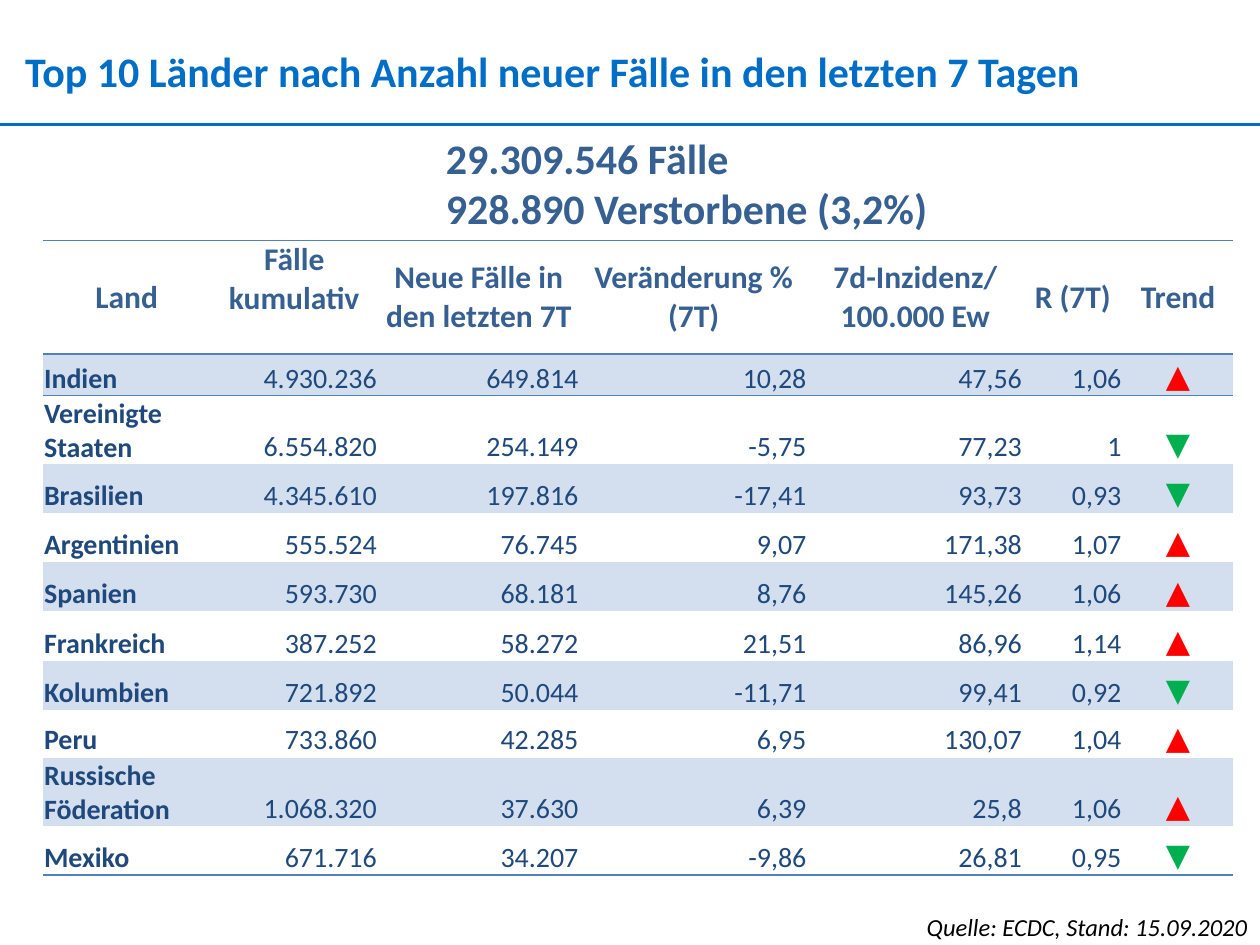
from lxml.etree import SubElement
from pptx import Presentation
from pptx.dml.color import RGBColor
from pptx.enum.shapes import MSO_CONNECTOR
from pptx.enum.text import MSO_ANCHOR as Anchor, MSO_AUTO_SIZE as AutoSize, PP_ALIGN as Align
from pptx.oxml.ns import qn
from pptx.util import Inches, Pt

FONT = "Calibri"
TITLE_BLUE = "006EC7"
HEADING_BLUE = "366092"
BODY_BLUE = "1F497D"
BORDER_BLUE = "4F81BD"
BAND = "D3DFEE"
TREND_COLORS = {"▲": "FF0000", "▼": "00B050"}
PLAIN_TABLE_STYLE = "{2D5ABB26-0587-4C30-8999-92F81FD0307C}"

COL_WIDTHS = [1.33, 1.33, 1.6, 1.81, 1.71, 0.79, 0.88]
ROW_HEIGHTS = [0.9, 0.33, 0.54] + [0.39] * 5 + [0.38, 0.54, 0.39]
HEADERS = ["Land", "Fälle kumulativ", "Neue Fälle in den letzten 7T", "Veränderung % (7T)",
           "7d-Inzidenz/ 100.000 Ew", "R (7T)", "Trend"]
COUNTRIES = [
    ("Indien", "4.930.236", "649.814", "10,28", "47,56", "1,06", "▲"),
    ("Vereinigte Staaten", "6.554.820", "254.149", "-5,75", "77,23", "1", "▼"),
    ("Brasilien", "4.345.610", "197.816", "-17,41", "93,73", "0,93", "▼"),
    ("Argentinien", "555.524", "76.745", "9,07", "171,38", "1,07", "▲"),
    ("Spanien", "593.730", "68.181", "8,76", "145,26", "1,06", "▲"),
    ("Frankreich", "387.252", "58.272", "21,51", "86,96", "1,14", "▲"),
    ("Kolumbien", "721.892", "50.044", "-11,71", "99,41", "0,92", "▼"),
    ("Peru", "733.860", "42.285", "6,95", "130,07", "1,04", "▲"),
    ("Russische Föderation", "1.068.320", "37.630", "6,39", "25,8", "1,06", "▲"),
    ("Mexiko", "671.716", "34.207", "-9,86", "26,81", "0,95", "▼"),
]


def rgb(color):
    return RGBColor.from_string(color)


def style_paragraph(p, size, color, bold=False, italic=False, align=Align.LEFT):
    p.alignment = align
    font = p.font
    font.name, font.size, font.bold, font.italic = FONT, Pt(size), bold, italic
    font.color.rgb = rgb(color)


def set_margins(target, left, top, right, bottom):
    target.margin_left, target.margin_top = Inches(left), Inches(top)
    target.margin_right, target.margin_bottom = Inches(right), Inches(bottom)


def add_text(slide, box, lines, size, color, margins=(0.1, 0.05, 0.1, 0.05), wrap=True, **style):
    tf = slide.shapes.add_textbox(*map(Inches, box)).text_frame
    tf.word_wrap = wrap
    tf.auto_size = AutoSize.SHAPE_TO_FIT_TEXT
    set_margins(tf, *margins)
    tf.text = "\n".join(lines)
    for p in tf.paragraphs:
        style_paragraph(p, size, color, **style)


def add_rule(slide, y):
    line = slide.shapes.add_connector(MSO_CONNECTOR.STRAIGHT, 0, Inches(y), Inches(10), Inches(y))
    line.line.color.rgb = rgb(TITLE_BLUE)
    line.line.width = Pt(1.5)
    SubElement(line.element.spPr, qn("a:effectLst"))


def add_borders(cell, sides):
    tc_pr = cell._tc.get_or_add_tcPr()
    for side in sides:
        ln = SubElement(tc_pr, qn(f"a:ln{side}"), w=str(Pt(1)))
        fill = SubElement(ln, qn("a:solidFill"))
        SubElement(fill, qn("a:srgbClr"), val=BORDER_BLUE)


def fill_cell(cell, text, anchor, margins, borders="", band=False, **style):
    cell.text = text
    cell.vertical_anchor = anchor
    set_margins(cell, *margins)
    style_paragraph(cell.text_frame.paragraphs[0], **style)
    add_borders(cell, borders)
    if band:
        cell.fill.solid()
        cell.fill.fore_color.rgb = rgb(BAND)
    else:
        cell.fill.background()


def body_style(col, text):
    if text in TREND_COLORS:
        return dict(size=18, color=TREND_COLORS[text], align=Align.CENTER)
    if col == 0:
        return dict(size=16, color=BODY_BLUE, bold=True)
    return dict(size=16, color=BODY_BLUE, align=Align.RIGHT)


def add_country_table(slide, left, top):
    frame = slide.shapes.add_table(
        len(ROW_HEIGHTS), len(COL_WIDTHS), Inches(left), Inches(top),
        Inches(sum(COL_WIDTHS)), Inches(sum(ROW_HEIGHTS)))
    table = frame.table
    table.first_row = table.horz_banding = False
    next(frame.element.iter(qn("a:tableStyleId"))).text = PLAIN_TABLE_STYLE
    for column, width in zip(table.columns, COL_WIDTHS):
        column.width = Inches(width)
    for row, height in zip(table.rows, ROW_HEIGHTS):
        row.height = Inches(height)

    for col, text in enumerate(HEADERS):
        bottom = 0.3 if text == "Fälle kumulativ" else 0
        fill_cell(table.cell(0, col), text, Anchor.MIDDLE, (0.06, 0, 0.06, bottom), "TB",
                  size=18, color=HEADING_BLUE, bold=True, align=Align.CENTER)
    for row, country in enumerate(COUNTRIES, 1):
        borders = {1: "T", len(COUNTRIES): "B"}.get(row, "")
        for col, text in enumerate(country):
            fill_cell(table.cell(row, col), text, Anchor.BOTTOM, (0.01, 0.01, 0.01, 0),
                      borders, band=row % 2 == 1, **body_style(col, text))


def main():
    prs = Presentation()
    prs.slide_width, prs.slide_height = Inches(10), Inches(7.5)
    slide = prs.slides.add_slide(prs.slide_layouts[6])
    add_text(slide, (0.2, 0.36, 9.63, 0.4),
             ["Top 10 Länder nach Anzahl neuer Fälle in den letzten 7 Tagen"],
             24, TITLE_BLUE, margins=(0, 0, 0, 0), bold=True)
    add_rule(slide, 0.99)
    add_text(slide, (3.44, 1, 4.21, 0.91), ["29.309.546 Fälle", "928.890 Verstorbene (3,2%)"],
             24, HEADING_BLUE, wrap=False, bold=True)
    add_text(slide, (6.46, 7.19, 3.54, 0.34), ["Quelle: ECDC, Stand: 15.09.2020"],
             14, "000000", italic=True, align=Align.RIGHT)
    add_country_table(slide, 0.34, 1.91)
    prs.save("out.pptx")


if __name__ == "__main__":
    main()
